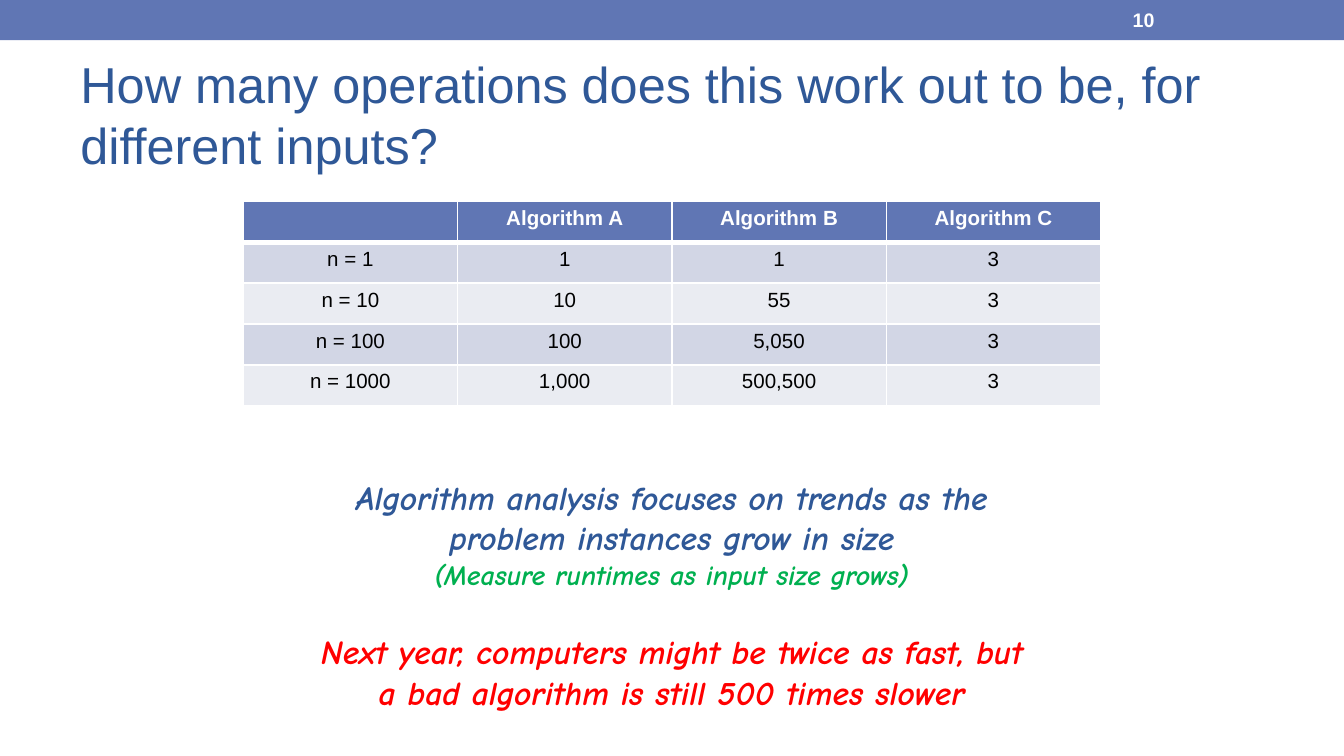
"""Build a slide comparing operation counts of three algorithms."""
from typing import NamedTuple

from lxml import etree
from pptx import Presentation
from pptx import util as u
from pptx.dml.color import RGBColor
from pptx.enum import shapes, text
from pptx.oxml.ns import qn

BAND, NAVY, WHITE, BLACK = "6076B4", "2F5897", "FFFFFF", "000000"
GREEN, RED = "00B050", "FF0000"
ROW_FILLS = ("EAECF2", "D2D6E5")
COUNTS = (
    ("", "Algorithm A", "Algorithm B", "Algorithm C"),
    ("n = 1", "1", "1", "3"),
    ("n = 10", "10", "55", "3"),
    ("n = 100", "100", "5,050", "3"),
    ("n = 1000", "1,000", "500,500", "3"),
)


class Style(NamedTuple):
    size: float
    color: str
    bold: bool = False
    italic: bool = False
    face: str = "Arial"


class Line(NamedTuple):
    words: str
    style: Style
    align: text.PP_ALIGN = text.PP_ALIGN.LEFT
    space_before: float = 0


class Block(NamedTuple):
    left: float
    top: float
    width: float
    height: float
    anchor: text.MSO_ANCHOR
    lines: tuple[Line, ...]


def rgb(color: str) -> RGBColor:
    return RGBColor.from_string(color)


def write(paragraph, line: Line) -> None:
    paragraph.text = line.words
    paragraph.alignment = line.align
    paragraph.space_before = u.Pt(line.space_before)
    style = line.style
    for run in paragraph.runs:
        run.font.name = style.face
        run.font.size = u.Pt(style.size)
        run.font.bold = style.bold
        run.font.italic = style.italic
        run.font.color.rgb = rgb(style.color)
    if not line.words:
        etree.SubElement(paragraph._p, qn("a:endParaRPr"), sz=str(int(style.size * 100)))


def draw_block(slide, block: Block) -> None:
    box = slide.shapes.add_textbox(*(u.Inches(v) for v in block[:4]))
    frame = box.text_frame
    frame.word_wrap = True
    frame.vertical_anchor = block.anchor
    for index, line in enumerate(block.lines):
        write(frame.add_paragraph() if index else frame.paragraphs[0], line)


def set_border(cell, side: str, points: float) -> None:
    border = etree.SubElement(cell._tc.get_or_add_tcPr(), qn(f"a:ln{side}"), w=str(u.Pt(points)))
    fill = etree.SubElement(border, qn("a:solidFill"))
    etree.SubElement(fill, qn("a:srgbClr"), val=WHITE)


def draw_counts(slide) -> None:
    table = slide.shapes.add_table(
        len(COUNTS), len(COUNTS[0]),
        u.Inches(1.81), u.Inches(1.5), u.Inches(6.38), u.Inches(1.52),
    ).table
    for r, values in enumerate(COUNTS):
        header = r == 0
        style = Style(11, WHITE if header else BLACK, bold=header)
        thick_side = {0: "B", 1: "T"}.get(r)
        for c, value in enumerate(values):
            cell = table.cell(r, c)
            cell.margin_left = cell.margin_right = u.Inches(0.07)
            cell.margin_top = cell.margin_bottom = u.Inches(0.04)
            for side in "LRTB":
                set_border(cell, side, 3 if side == thick_side else 1)
            cell.fill.solid()
            cell.fill.fore_color.rgb = rgb(BAND if header else ROW_FILLS[r % 2])
            write(cell.text_frame.paragraphs[0], Line(value, style, text.PP_ALIGN.CENTER))


def draw_band(slide) -> None:
    band = slide.shapes.add_shape(
        shapes.MSO_SHAPE.RECTANGLE, 0, 0, u.Inches(10), u.Inches(0.3))
    band.shadow.inherit = False
    band.fill.solid()
    band.fill.fore_color.rgb = rgb(BAND)
    band.line.fill.background()


def main() -> None:
    deck = Presentation()
    deck.slide_width = u.Inches(10)
    deck.slide_height = u.Inches(10) * 9 // 16
    slide = deck.slides.add_slide(deck.slide_layouts[6])
    middle, top, center = text.MSO_ANCHOR.MIDDLE, text.MSO_ANCHOR.TOP, text.PP_ALIGN.CENTER
    trend = Style(18, NAVY, True, True, "Comic Neue")
    title = Block(0.5, 0.44, 9, 0.81, middle, (
        Line("How many operations does this work out to be, for different inputs?",
             Style(27, NAVY)),))
    takeaways = Block(2.26, 3.5, 5.48, 1.87, top, (
        Line("Algorithm analysis focuses on trends as the problem instances grow in size",
             trend, center),
        Line("(Measure runtimes as input size grows)",
             trend._replace(size=15, color=GREEN), center),
        Line("Next year, computers might be twice as fast, but a bad algorithm "
             "is still 500 times slower", trend._replace(color=RED), center, 21.5),
    ))
    page_number = Block(8.33, 0.01, 1.17, 0.27, middle, (
        Line("10", Style(10.5, WHITE, True)),))

    draw_band(slide)
    draw_block(slide, title)
    draw_counts(slide)
    draw_block(slide, takeaways)
    draw_block(slide, page_number)
    deck.save("out.pptx")


if __name__ == "__main__":
    main()
